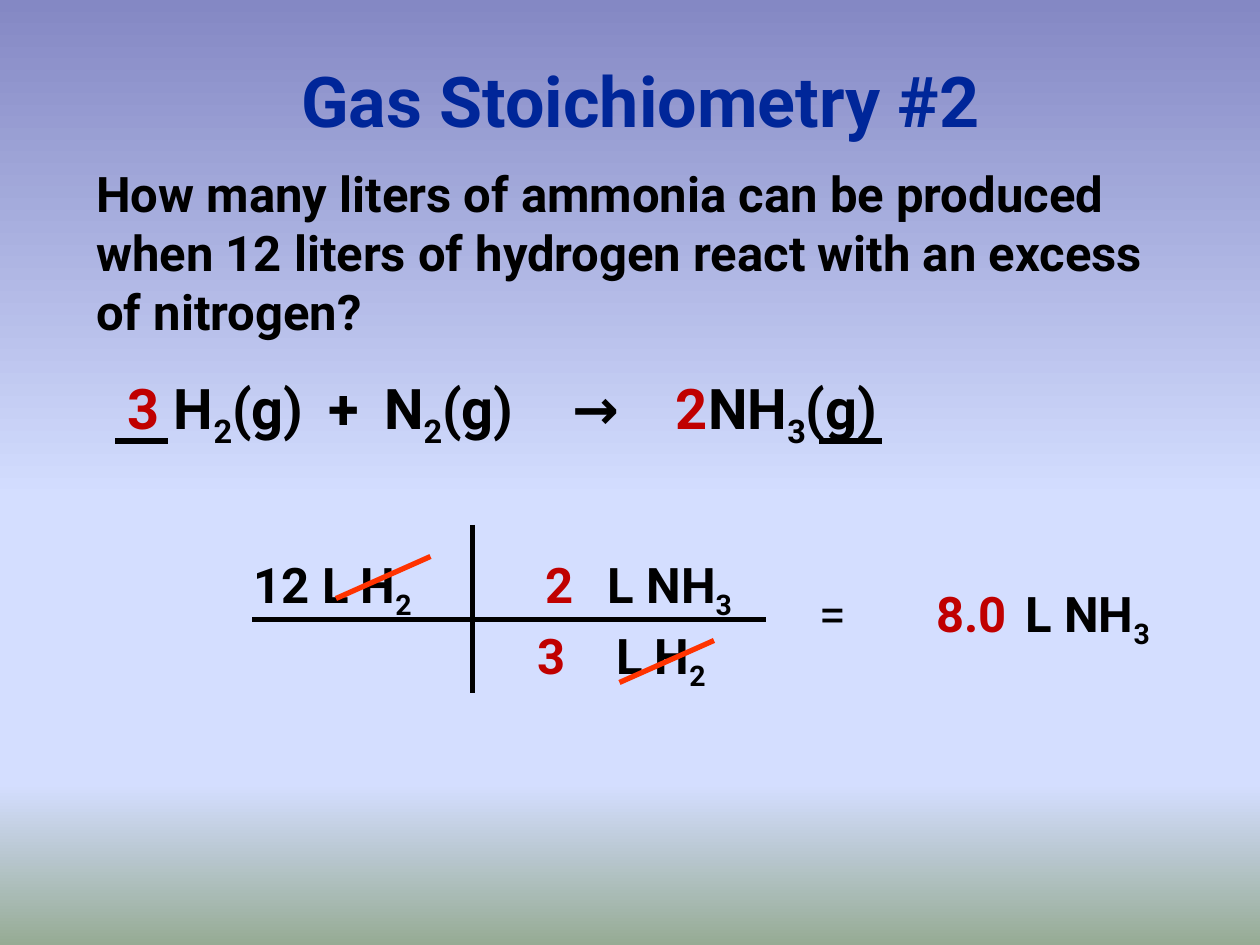
"""Build the gas stoichiometry slide on a grid of 120 columns by 90 rows."""
from dataclasses import dataclass

from lxml import etree
from pptx import Presentation
from pptx import util as u
from pptx.dml.color import RGBColor
from pptx.enum import shapes, text
from pptx.oxml.ns import qn

BLACK = RGBColor(0x00, 0x00, 0x00)
NAVY = RGBColor(0x00, 0x26, 0x99)
RED = RGBColor(0xC0, 0x00, 0x00)
ORANGE = RGBColor(0xFF, 0x33, 0x00)
LILAC = RGBColor(0x84, 0x88, 0xC4)
SKY = RGBColor(0xD4, 0xDE, 0xFF)
SAGE = RGBColor(0x96, 0xAB, 0x94)

FONT = "Roboto"
CELL = u.Inches(10) // 120
BACKDROP = ((0, LILAC), (53, SKY), (83, SKY), (100, SAGE))


@dataclass(frozen=True)
class Run:
    """A stretch of text with one look."""
    words: str
    color: RGBColor = BLACK
    sub: bool = False
    bold: bool = True


@dataclass(frozen=True)
class Label:
    """A text box placed in grid columns and rows."""
    col: float
    row: float
    cols: float
    rows: float
    runs: tuple[Run, ...]
    size: int = 28
    wrap: bool = False
    title: bool = False
    tabs: tuple[float, ...] = ()


@dataclass(frozen=True)
class Rule:
    """A straight line between two grid points."""
    start: tuple[float, float]
    end: tuple[float, float]
    color: RGBColor = BLACK


def grid(cells: float) -> u.Emu:
    """Turn grid cells into a length."""
    return u.Emu(round(cells * CELL))


def formula(symbol: str, count: str) -> tuple[Run, Run]:
    """Give a chemical symbol and its subscript."""
    return Run(symbol), Run(count, sub=True)


TOP, BOTTOM, MIDDLE = 52.2, 59, 55
LABELS = (
    Label(10, 4, 102, 11, (Run("Gas Stoichiometry #2", NAVY),), 40, True, True),
    Label(8, 15, 104.2, 18, (Run(
        "How many liters of ammonia can be produced when 12 liters of "
        "hydrogen react with an excess of nitrogen?"),), wrap=True),
    Label(11, 35, 94, 7.7, (
        Run("3", RED), *formula(" H", "2"), Run("(g)\t+\t"),
        *formula("N", "2"), Run("(g)\t→\t"), Run("2", RED),
        *formula("NH", "3"), Run("(g)")), 32, True, tabs=(19.1, 24.4, 42.3, 52.2)),
    Label(23, TOP, 18.2, 6.8, formula("12 L H", "2")),
    Label(50.8, TOP, 5.3, 6.8, (Run("2", RED),)),
    Label(56.7, TOP, 14.5, 6.8, formula("L NH", "3")),
    Label(50, BOTTOM, 5.3, 6.8, (Run("3", RED),)),
    Label(57.5, BOTTOM, 11.3, 6.8, formula("L H", "2")),
    Label(76.8, MIDDLE, 41.4, 6.8, (
        Run("=\t", bold=False), *formula("L NH", "3")), wrap=True, tabs=(19.7,)),
    Label(88, MIDDLE, 10.9, 6.8, (Run("8.0", RED),)),
)
RULES = (
    Rule((24, 59), (73, 59)),
    Rule((45, 50), (45, 66)),
    Rule((11, 42), (16, 42)),
    Rule((78, 42), (84, 42)),
    Rule((32, 57), (41, 53), ORANGE),
    Rule((59, 65), (68, 61), ORANGE),
)


def paint_background(s) -> None:
    """Fill the slide with the vertical gradient."""
    fill = s.background.fill
    fill.gradient()
    fill.gradient_angle = 270
    stops = next(s.element.iter(qn("a:gsLst")))
    for stop in list(stops):
        stops.remove(stop)
    for share, color in BACKDROP:
        stop = etree.SubElement(stops, qn("a:gs"), pos=str(share * 1000))
        etree.SubElement(stop, qn("a:srgbClr"), val=str(color))


def draw_label(s, label: Label) -> None:
    """Write one text box."""
    sp = s.shapes.add_textbox(*map(grid, (label.col, label.row, label.cols, label.rows)))
    tf = sp.text_frame
    tf.word_wrap = label.wrap
    p = tf.paragraphs[0]
    if label.title:
        tf.vertical_anchor = text.MSO_ANCHOR.MIDDLE
        p.alignment = text.PP_ALIGN.CENTER
    p.font.name = FONT
    p.font.size = u.Pt(label.size)
    for run in label.runs:
        r = p.add_run()
        r.text = run.words
        r.font.bold = run.bold
        r.font.color.rgb = run.color
        if run.sub:
            r._r.get_or_add_rPr().set("baseline", "-25000")
    if label.tabs:
        stops = etree.Element(qn("a:tabLst"))
        for tab in label.tabs:
            etree.SubElement(stops, qn("a:tab"), pos=str(grid(tab)), algn="l")
        p._p.get_or_add_pPr().insert(0, stops)


def draw_rule(s, rule: Rule) -> None:
    """Draw one line."""
    sp = s.shapes.add_connector(
        shapes.MSO_CONNECTOR.STRAIGHT, *map(grid, rule.start + rule.end))
    sp.line.color.rgb = rule.color
    sp.line.width = u.Pt(3)
    etree.SubElement(sp.element.spPr, qn("a:effectLst"))


def main() -> None:
    """Build and save the slide."""
    prs = Presentation()
    prs.slide_width, prs.slide_height = grid(120), grid(90)
    s = prs.slides.add_slide(prs.slide_layouts[6])
    paint_background(s)
    for label in LABELS:
        draw_label(s, label)
    for rule in RULES:
        draw_rule(s, rule)
    prs.save("out.pptx")


if __name__ == "__main__":
    main()
